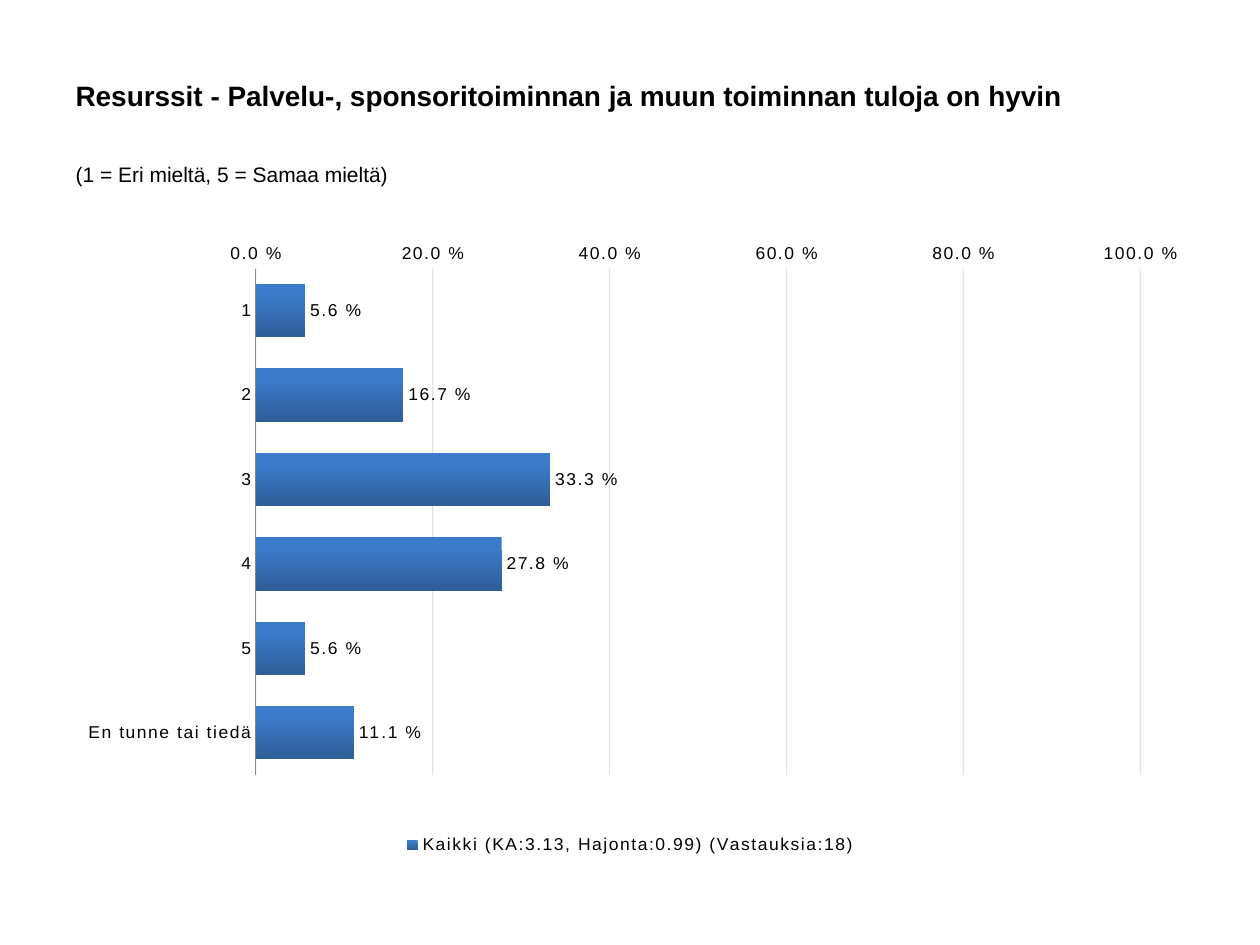
import pptx
import pptx.chart.data
import pptx.dml.color
import pptx.enum.chart
import pptx.enum.text
import pptx.oxml
import pptx.oxml.ns
import pptx.util
from pptx.util import Inches

COLORS = {
    "text": "000000",
    "bar_top": "3B7BCA",
    "bar_bottom": "2F5D97",
    "grid": "4F81BD",
    "axis": "868686",
}
PERCENT = "0.0\\ %"
ANSWERS = {
    "1": 0.056,
    "2": 0.167,
    "3": 0.333,
    "4": 0.278,
    "5": 0.056,
    "En tunne tai tiedä": 0.111,
}


def rgb(name):
    return pptx.dml.color.RGBColor.from_string(COLORS[name])


def style_font(font, size, bold=False):
    font.name = "Arial"
    font.size = pptx.util.Pt(size)
    font.bold = bold
    font.color.rgb = rgb("text")


def fill_placeholder(placeholder, text, box, size, bold=False):
    placeholder.left, placeholder.top, placeholder.width, placeholder.height = map(Inches, box)
    frame = placeholder.text_frame
    frame.text = text
    paragraph = frame.paragraphs[0]
    paragraph.alignment = pptx.enum.text.PP_ALIGN.LEFT
    style_font(paragraph.runs[0].font, size, bold)
    return paragraph


def remove_bullet(paragraph):
    properties = paragraph._p.get_or_add_pPr()
    properties.set("marL", "0")
    properties.set("indent", "0")
    pptx.oxml.ns.qn("a:buNone")
    properties.append(properties.makeelement(pptx.oxml.ns.qn("a:buNone"), {}))


def set_plot_area(chart, x, y, w, h):
    """Place the inner plot area by fractions of the chart."""
    places = "".join(f'<c:{key} val="{value}"/>' for key, value in zip("xywh", (x, y, w, h)))
    layout = pptx.oxml.parse_xml(
        f'<c:layout {pptx.oxml.ns.nsdecls("c")}><c:manualLayout><c:layoutTarget val="inner"/>'
        f'<c:xMode val="edge"/><c:yMode val="edge"/>{places}</c:manualLayout></c:layout>'
    )
    plot_area = chart._chartSpace.chart.plotArea
    for old in plot_area.findall(pptx.oxml.ns.qn("c:layout")):
        plot_area.remove(old)
    plot_area.insert(0, layout)


def style_axes(chart):
    answers, share = chart.category_axis, chart.value_axis
    for axis in (answers, share):
        axis.major_tick_mark = pptx.enum.chart.XL_TICK_MARK.NONE
        axis.minor_tick_mark = pptx.enum.chart.XL_TICK_MARK.NONE
        style_font(axis.tick_labels.font, 10)
    answers.reverse_order = True
    answers.crosses = pptx.enum.chart.XL_AXIS_CROSSES.MAXIMUM
    answers.format.line.color.rgb = rgb("axis")

    share.minimum_scale, share.maximum_scale, share.major_unit = 0, 1, 0.2
    share.tick_labels.number_format = PERCENT
    share.tick_labels.number_format_is_linked = False
    share.format.line.fill.background()
    grid = share.major_gridlines.format.line
    grid.width = pptx.util.Pt(0.75)
    grid.color.rgb = rgb("grid")
    for color in share.major_gridlines._xAx.majorGridlines.iter(pptx.oxml.ns.qn("a:srgbClr")):
        color.append(color.makeelement(pptx.oxml.ns.qn("a:alpha"), {"val": "20000"}))


def style_bars(plot):
    plot.gap_width = 58
    plot.vary_by_categories = False
    fill = plot.series[0].format.fill
    fill.gradient()
    fill.gradient_angle = 270
    for stop, color, position in zip(fill.gradient_stops, ("bar_top", "bar_bottom"), (0.2, 1)):
        stop.color.rgb = rgb(color)
        stop.position = position
    labels = plot.series[0].data_labels
    labels.show_value = True
    labels.number_format = PERCENT
    labels.number_format_is_linked = False
    labels.position = pptx.enum.chart.XL_LABEL_POSITION.OUTSIDE_END
    style_font(labels.font, 10)


def add_answer_chart(slide):
    data = pptx.chart.data.CategoryChartData(number_format=PERCENT)
    data.categories = list(ANSWERS)
    data.add_series("Kaikki (KA:3.13, Hajonta:0.99) (Vastauksia:18)", ANSWERS.values())
    chart = slide.shapes.add_chart(
        pptx.enum.chart.XL_CHART_TYPE.BAR_CLUSTERED,
        Inches(0.5), Inches(1.94), Inches(9), Inches(4.88), data,
    ).chart
    chart.has_title = False
    chart.font.name = "Calibri"
    chart.font.size = pptx.util.Pt(10)
    chart.font.color.rgb = rgb("text")
    chart.has_legend = True
    chart.legend.position = pptx.enum.chart.XL_LEGEND_POSITION.BOTTOM
    chart.legend.include_in_layout = False
    style_font(chart.legend.font, 10)
    style_axes(chart)
    style_bars(chart.plots[0])
    set_plot_area(chart, 0.17, 0.02, 0.78, 0.84)
    for properties in chart._chartSpace.iter(pptx.oxml.ns.qn("a:defRPr")):
        properties.set("spc", "100")


def main():
    presentation = pptx.Presentation()
    presentation.slide_width, presentation.slide_height = Inches(10), Inches(7.5)
    slide = presentation.slides.add_slide(presentation.slide_layouts[1])
    title, scale = slide.placeholders
    fill_placeholder(
        title, "Resurssit - Palvelu-, sponsoritoiminnan ja muun toiminnan tuloja on hyvin",
        (0.5, 0.36, 9, 0.79), 16, bold=True,
    )
    title.text_frame.vertical_anchor = pptx.enum.text.MSO_ANCHOR.MIDDLE
    remove_bullet(fill_placeholder(
        scale, "(1 = Eri mieltä, 5 = Samaa mieltä)", (0.5, 1.23, 9, 0.59), 12,
    ))
    add_answer_chart(slide)
    presentation.save("out.pptx")


if __name__ == "__main__":
    main()
